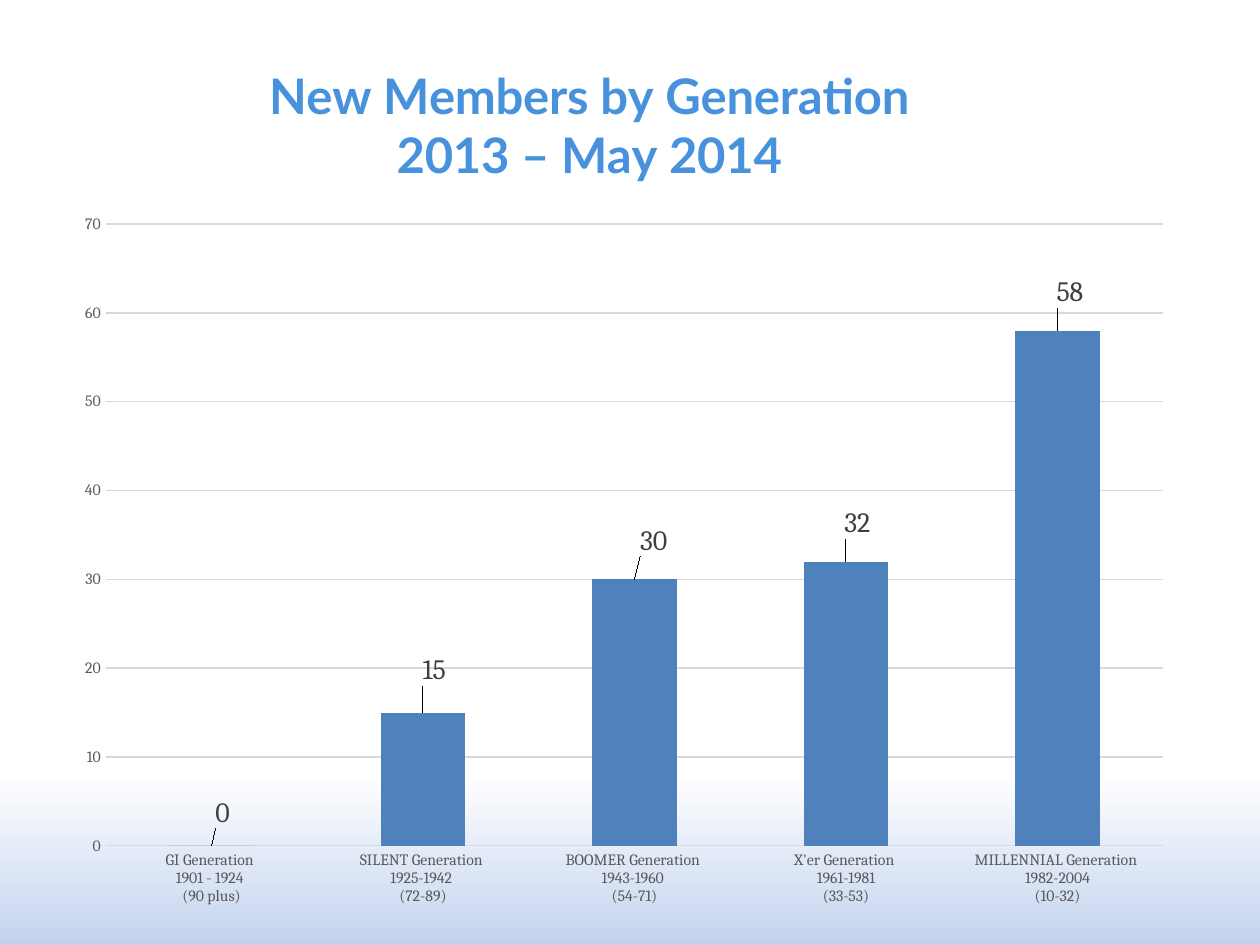
from dataclasses import dataclass

from lxml.etree import SubElement
from pptx import Presentation
from pptx.chart.data import CategoryChartData
from pptx.dml.color import RGBColor
from pptx.enum.chart import XL_CHART_TYPE, XL_LABEL_POSITION, XL_TICK_MARK
from pptx.enum.text import PP_ALIGN
from pptx.oxml.ns import qn
from pptx.util import Inches, Pt


@dataclass(frozen=True)
class Theme:
    """Colours, fonts and type sizes of the slide."""
    title: str = "4891DC"
    bar: str = "4F81BD"
    axis: str = "595959"
    label: str = "404040"
    grid: str = "D9D9D9"
    sky: str = "C3D3EF"
    white: str = "FFFFFF"
    head_font: str = "Lato"
    body_font: str = "Cambria"
    title_size: int = 28
    axis_size: int = 9
    label_size: int = 16


THEME = Theme()
TITLE = "New Members by Generation\n2013 – May 2014"
GENERATIONS = [
    ("GI Generation \n1901 - 1924 \n(90 plus)", 0, (0.01, -0.014)),
    ("SILENT Generation \n1925-1942 \n(72-89)", 15, (0.01, -0.024)),
    ("BOOMER Generation \n1943-1960 \n(54-71)", 30, (0.017, -0.02)),
    ("X'er Generation \n1961-1981\n(33-53)", 32, (0.01, -0.02)),
    ("MILLENNIAL Generation \n1982-2004\n(10-32)", 58, (0.011, -0.02)),
]


def style_font(font, name, size, color, bold=False):
    """Set the face, size, colour and weight of a font."""
    font.name, font.size, font.bold = name, Pt(size), bold
    font.color.rgb = RGBColor.from_string(color)


def make_layout(parent, **values):
    """Return a manual chart layout holding the given values in order."""
    layout = parent.makeelement(qn("c:layout"))
    manual = SubElement(layout, qn("c:manualLayout"))
    for name, value in values.items():
        SubElement(manual, qn(f"c:{name}")).set("val", str(value))
    return layout


def paint_background(s):
    """Fade the background from blue at the foot to white."""
    fill = s.background.fill
    fill.gradient()
    fill.gradient_angle = 90
    stops = zip(fill.gradient_stops, (THEME.sky, THEME.white), (0, 0.18))
    for stop, color, position in stops:
        stop.color.rgb = RGBColor.from_string(color)
        stop.position = position


def style_title(chart):
    """Write the chart title and place it above the plot."""
    title = chart.chart_title
    title.include_in_layout = False
    tf = title.text_frame
    tf.text = TITLE
    for p in tf.paragraphs:
        p.alignment = PP_ALIGN.CENTER
        for r in p.runs:
            style_font(r.font, THEME.head_font, THEME.title_size, THEME.title, True)
    element = title._element
    for old in element.findall(qn("c:layout")):
        element.remove(old)
    layout = make_layout(element, xMode="edge", yMode="edge", x=0.18, y=0.02)
    element.find(qn("c:tx")).addnext(layout)


def style_axes(chart):
    """Format both axes and the value gridlines."""
    for axis in (chart.category_axis, chart.value_axis):
        axis.major_tick_mark = axis.minor_tick_mark = XL_TICK_MARK.NONE
        axis.format.line.fill.background()
        style_font(axis.tick_labels.font, THEME.body_font, THEME.axis_size, THEME.axis)
    axis = chart.value_axis
    axis.minimum_scale, axis.maximum_scale, axis.major_unit = 0, 70, 10
    axis.has_major_gridlines = True
    line = axis.major_gridlines.format.line
    line.color.rgb = RGBColor.from_string(THEME.grid)
    line.width = Pt(0.75)


def style_bars(plot):
    """Colour the bars and shift each value label above its bar."""
    plot.gap_width = 150
    plot.vary_by_categories = False
    series = plot.series[0]
    series.format.fill.solid()
    series.format.fill.fore_color.rgb = RGBColor.from_string(THEME.bar)
    for i, (_, _, (dx, dy)) in enumerate(GENERATIONS):
        label = series.points[i].data_label
        style_font(label.font, THEME.body_font, THEME.label_size, THEME.label)
        label.position = XL_LABEL_POSITION.OUTSIDE_END
    for element, (_, _, (dx, dy)) in zip(series._element.iter(qn("c:dLbl")), GENERATIONS):
        element.find(qn("c:idx")).addnext(make_layout(element, x=dx, y=dy))


def add_members_chart(s, left, top, width, height):
    """Add the column chart of new members inside the given box."""
    data = CategoryChartData()
    data.categories = [name for name, _, _ in GENERATIONS]
    data.add_series("Series 1", [value for _, value, _ in GENERATIONS])
    chart = s.shapes.add_chart(
        XL_CHART_TYPE.COLUMN_CLUSTERED, left, top, width, height, data).chart
    chart.has_legend = False
    chart.font.name, chart.font.size = "Calibri", Pt(10)
    style_title(chart)
    style_axes(chart)
    style_bars(chart.plots[0])
    area = chart._chartSpace.chart.plotArea
    for old in area.findall(qn("c:layout")):
        area.remove(old)
    area.insert(0, make_layout(area, layoutTarget="inner", xMode="edge", yMode="edge",
                               x=0.038, y=0.207, w=0.941, h=0.705))


def main():
    """Build and save the presentation."""
    prs = Presentation()
    prs.slide_width, prs.slide_height = Inches(10), Inches(7.5)
    s = prs.slides.add_slide(prs.slide_layouts[6])
    paint_background(s)
    add_members_chart(s, Inches(0.5), Inches(0.33), Inches(8.92), Inches(7))
    prs.save("out.pptx")


if __name__ == "__main__":
    main()
